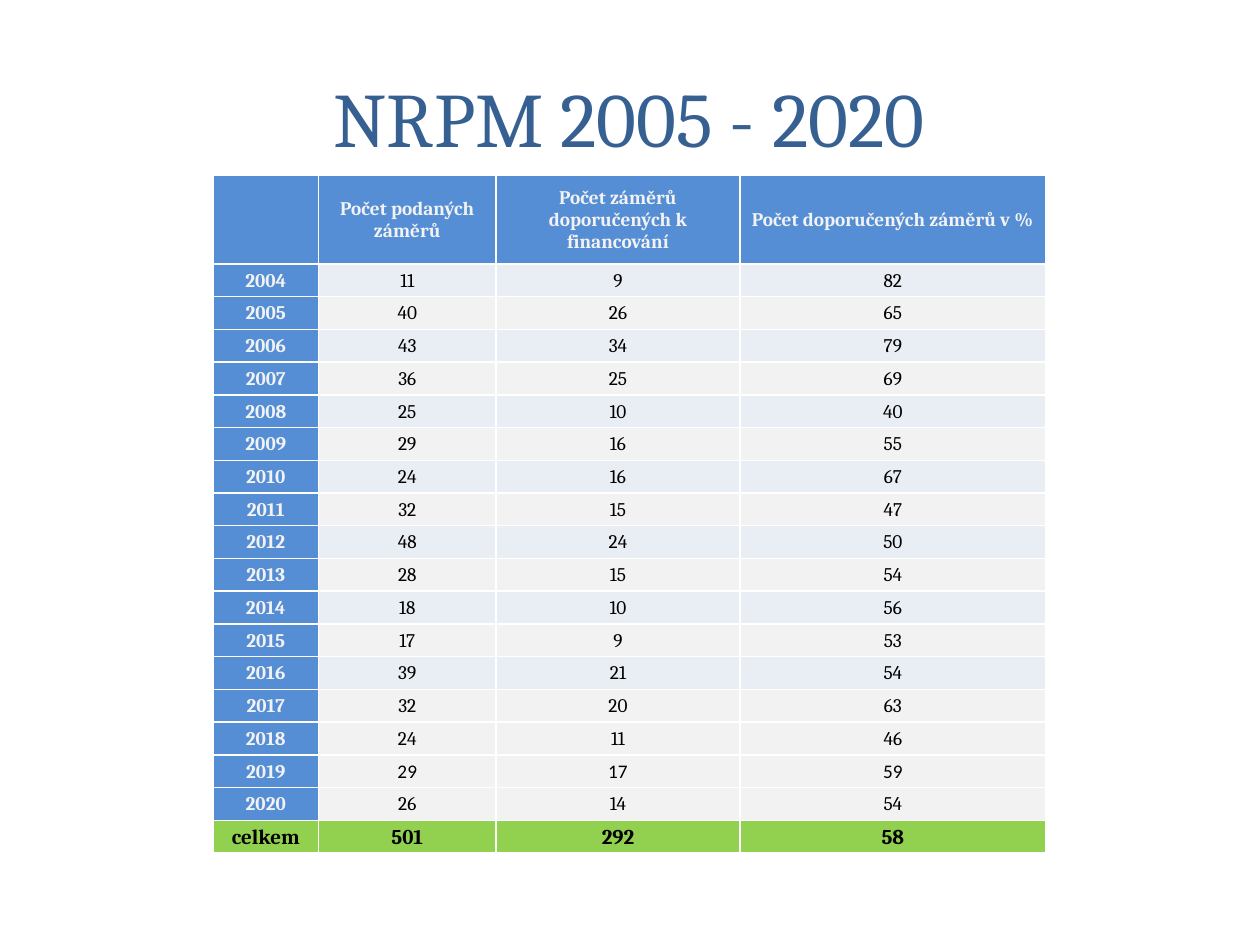
from lxml import etree
from pptx import Presentation
from pptx import util as u
from pptx.dml.color import RGBColor
from pptx.enum import text
from pptx.oxml import ns

NAVY = RGBColor(0x37, 0x60, 0x92)
BLUE = RGBColor(0x55, 0x8E, 0xD5)
PALE_BLUE = RGBColor(0xE9, 0xED, 0xF4)
PALE_GREY = RGBColor(0xF2, 0xF2, 0xF2)
GREEN = RGBColor(0x92, 0xD0, 0x50)
BLACK = RGBColor(0, 0, 0)
WHITE = RGBColor(0xFF, 0xFF, 0xFF)

HEADINGS = ["", "Počet podaných záměrů", "Počet záměrů doporučených k financování",
            "Počet doporučených záměrů v %"]
YEARS = [
    (2004, 11, 9, 82), (2005, 40, 26, 65), (2006, 43, 34, 79), (2007, 36, 25, 69),
    (2008, 25, 10, 40), (2009, 29, 16, 55), (2010, 24, 16, 67), (2011, 32, 15, 47),
    (2012, 48, 24, 50), (2013, 28, 15, 54), (2014, 18, 10, 56), (2015, 17, 9, 53),
    (2016, 39, 21, 54), (2017, 32, 20, 63), (2018, 24, 11, 46), (2019, 29, 17, 59),
    (2020, 26, 14, 54),
]
TOTAL = ("celkem", 501, 292, 58)
LAST_BANDED_YEAR = 2016
CALIBRI_YEAR = 2019


class Deck:
    font = "Cambria"
    inset = u.Inches(0.01)

    def __init__(self, width, height):
        self.prs = Presentation()
        self.prs.slide_width = u.Inches(width)
        self.prs.slide_height = u.Inches(height)
        self.s = self.prs.slides.add_slide(self.prs.slide_layouts[5])

    def box(self, x, y, w, h):
        sw, sh = self.prs.slide_width / 100, self.prs.slide_height / 100
        return round(x * sw), round(y * sh), round(w * sw), round(h * sh)

    def add_text(self, tf, content, size, color, bold=False, font=None):
        tf.word_wrap = True
        p = tf.paragraphs[0]
        p.alignment = text.PP_ALIGN.CENTER
        r = p.add_run()
        r.text = str(content)
        r.font.name = font or self.font
        r.font.size = u.Pt(size)
        r.font.bold = bold
        r.font.color.rgb = color

    def title(self, content, x, y, w, h):
        sp = self.s.shapes.title
        sp.left, sp.top, sp.width, sp.height = self.box(x, y, w, h)
        sp.text_frame.vertical_anchor = text.MSO_ANCHOR.MIDDLE
        self.add_text(sp.text_frame, content, 44, NAVY)

    def table(self, n_rows, columns, header_share, x, y, w, h):
        left, top, width, height = self.box(x, y, w, h)
        table = self.s.shapes.add_table(n_rows, len(columns), left, top, width, height).table
        for column, share in zip(table.columns, columns):
            column.width = round(width * share / sum(columns))
        header = round(height * header_share)
        for i, row in enumerate(table.rows):
            row.height = round((height - header) / (n_rows - 1)) if i else header
        return table

    def borders(self, cell):
        tcPr = cell._tc.get_or_add_tcPr()
        for side in ("lnL", "lnR", "lnT", "lnB"):
            ln = etree.SubElement(tcPr, ns.qn(f"a:{side}"), w=str(u.Pt(1)))
            fill = etree.SubElement(ln, ns.qn("a:solidFill"))
            etree.SubElement(fill, ns.qn("a:srgbClr"), val=str(WHITE))

    def cell(self, cell, content, fill, color, size=11, bold=False, font=None):
        self.borders(cell)
        cell.fill.solid()
        cell.fill.fore_color.rgb = fill
        cell.vertical_anchor = text.MSO_ANCHOR.MIDDLE
        cell.margin_left = cell.margin_right = cell.margin_top = self.inset
        cell.margin_bottom = 0
        if content != "":
            self.add_text(cell.text_frame, content, size, color, bold, font)


def main():
    deck = Deck(10, 7.5)
    deck.title("NRPM 2005 - 2020", 6, 2.8, 87.9, 19)
    table = deck.table(len(YEARS) + 2, [0.84, 1.41, 1.94, 2.43], 0.13,
                       16.9, 18.6, 66.1, 71.7)

    for c, heading in enumerate(HEADINGS):
        deck.cell(table.cell(0, c), heading, BLUE, PALE_GREY, bold=True)

    for i, (year, *values) in enumerate(YEARS, 1):
        banded = year % 2 == 0 and year <= LAST_BANDED_YEAR
        font = "Calibri" if year == CALIBRI_YEAR else None
        deck.cell(table.cell(i, 0), year, BLUE, PALE_GREY, bold=True)
        for c, value in enumerate(values, 1):
            deck.cell(table.cell(i, c), value, PALE_BLUE if banded else PALE_GREY,
                      BLACK, font=font)

    for c, value in enumerate(TOTAL):
        deck.cell(table.cell(len(YEARS) + 1, c), value, GREEN, BLACK, size=12, bold=True)

    deck.prs.save("out.pptx")


if __name__ == "__main__":
    main()
